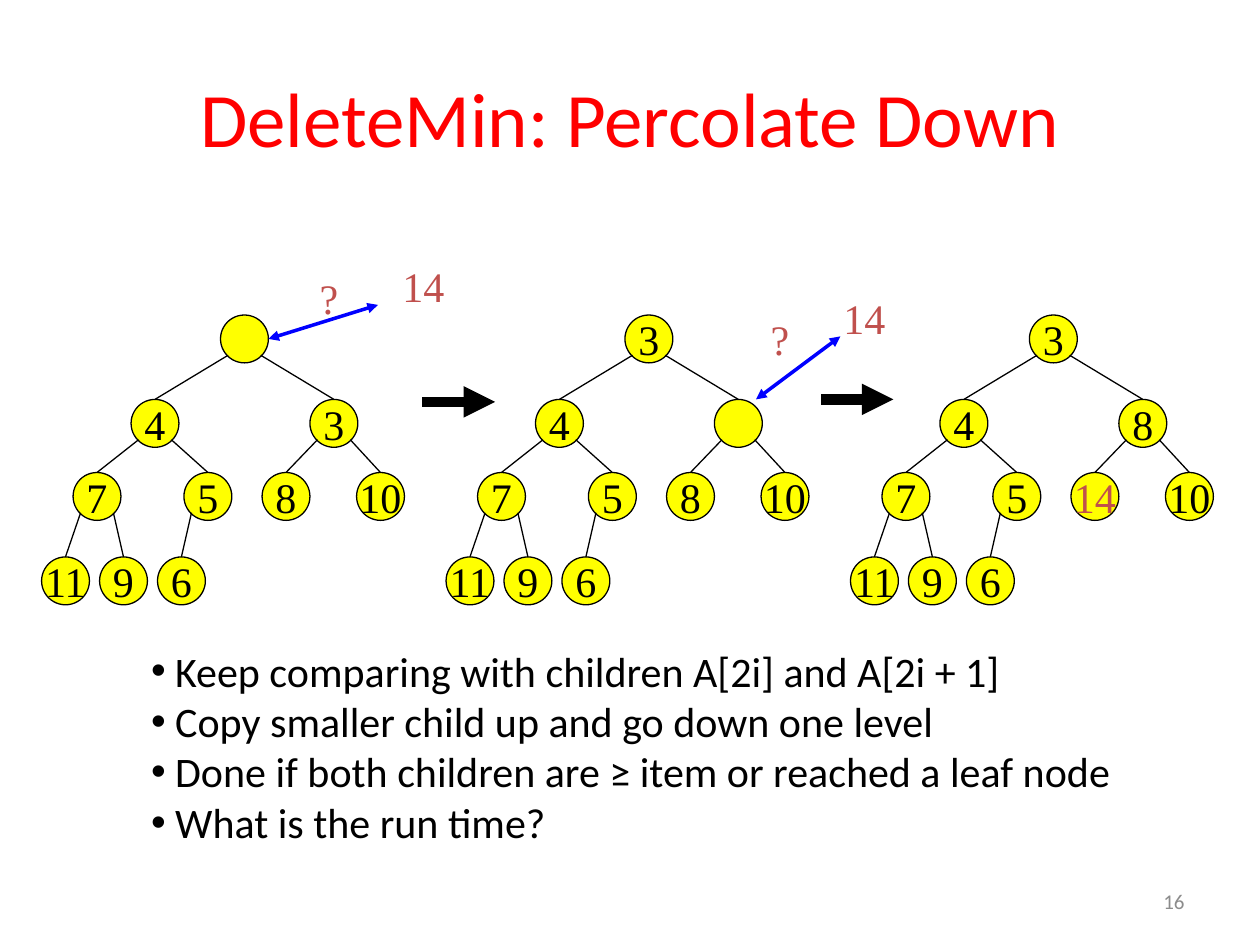
from dataclasses import dataclass

from lxml.etree import SubElement
from pptx import Presentation
from pptx.dml.color import RGBColor
from pptx.enum.shapes import MSO_CONNECTOR, MSO_SHAPE
from pptx.enum.text import MSO_ANCHOR, MSO_AUTO_SIZE, PP_ALIGN
from pptx.oxml.ns import qn
from pptx.slide import Slide
from pptx.text.text import TextFrame
from pptx.util import Inches, Pt


@dataclass(frozen=True)
class Theme:
    sans: str = "Calibri"
    serif: str = "Times New Roman"
    title: str = "FF0000"
    ink: str = "000000"
    node: str = "FFFF00"
    hole: str = "C0504D"
    swap: str = "0000FF"
    page: str = "8C8C8C"
    big: float = 44
    text: float = 24
    small: float = 12
    thin: float = 0.75
    mid: float = 2
    thick: float = 6


@dataclass(frozen=True)
class Tree:
    left: float
    keys: tuple[str, ...]
    moved: int = -1


@dataclass(frozen=True)
class Mark:
    text: str
    x: float
    y: float


@dataclass(frozen=True)
class Arrow:
    start: tuple[float, float]
    end: tuple[float, float]
    color: str
    width: float
    ends: tuple[str, ...]


THEME = Theme()
SIZE = 0.38
NEAR = 0.06
SPOTS = (
    (1.42, 2.5),
    (0.71, 3.17), (2.13, 3.17),
    (0.25, 3.75), (1.13, 3.75), (1.75, 3.75), (2.5, 3.75),
    (0, 4.42), (0.46, 4.42), (0.92, 4.42),
)
TREES = (
    Tree(0.33, ("", "4", "3", "7", "5", "8", "10", "11", "9", "6")),
    Tree(3.54, ("3", "4", "", "7", "5", "8", "10", "11", "9", "6")),
    Tree(6.75, ("3", "4", "8", "7", "5", "14", "10", "11", "9", "6"), moved=5),
)
MARKS = (
    Mark("14", 3.17, 2.08),
    Mark("?", 2.42, 2.17),
    Mark("14", 6.67, 2.33),
    Mark("?", 6, 2.5),
)
STEP = ("tailEnd",)
BOTH = ("headEnd", "tailEnd")
ARROWS = (
    Arrow((3.35, 3.19), (3.93, 3.19), THEME.ink, THEME.thick, STEP),
    Arrow((6.52, 3.17), (7.09, 3.17), THEME.ink, THEME.thick, STEP),
    Arrow((3, 2.42), (2.13, 2.69), THEME.swap, THEME.mid, BOTH),
    Arrow((6.67, 2.67), (6, 3.17), THEME.swap, THEME.mid, BOTH),
)
POINTS = (
    "Keep comparing with children A[2i] and A[2i + 1]",
    "Copy smaller child up and go down one level",
    "Done if both children are ≥ item or reached a leaf node",
    "What is the run time?",
)


def write(frame: TextFrame, text: str, *, size: float = THEME.text,
          font: str = THEME.sans, color: str = THEME.ink,
          align: PP_ALIGN = PP_ALIGN.LEFT,
          anchor: MSO_ANCHOR = MSO_ANCHOR.MIDDLE,
          wrap: bool = True, indent: float = 0) -> None:
    frame.text = text
    frame.auto_size = MSO_AUTO_SIZE.NONE
    frame.word_wrap = wrap
    frame.vertical_anchor = anchor
    for para in frame.paragraphs:
        para.alignment = align
        para.space_before = Pt(0)
        para.font.size = Pt(size)
        para.font.name = font
        para.font.color.rgb = RGBColor.from_string(color)
        if indent:
            props = para._p.get_or_add_pPr()
            props.set("marL", str(Inches(indent)))
            props.set("indent", str(-Inches(indent)))
            SubElement(props, qn("a:buFont")).set("typeface", "Arial")
            SubElement(props, qn("a:buChar")).set("char", "•")


def place(shape, x: float, y: float, wide: float, high: float) -> None:
    shape.left, shape.top = Inches(x), Inches(y)
    shape.width, shape.height = Inches(wide), Inches(high)


def add_ring(slide: Slide, x: float, y: float, text: str, color: str,
             fill: bool = True) -> None:
    ring = slide.shapes.add_shape(MSO_SHAPE.OVAL, Inches(x), Inches(y),
                                  Inches(SIZE), Inches(SIZE))
    ring.shadow.inherit = False
    if fill:
        ring.fill.solid()
        ring.fill.fore_color.rgb = RGBColor.from_string(THEME.node)
        ring.line.color.rgb = RGBColor.from_string(THEME.ink)
        ring.line.width = Pt(THEME.thin)
    else:
        ring.fill.background()
        ring.line.fill.background()
    if text:
        write(ring.text_frame, text, font=THEME.serif, color=color,
              align=PP_ALIGN.CENTER, wrap=False)


def add_line(slide: Slide, item: Arrow) -> None:
    ends = [Inches(n) for n in item.start + item.end]
    line = slide.shapes.add_connector(MSO_CONNECTOR.STRAIGHT, *ends)
    line.line.color.rgb = RGBColor.from_string(item.color)
    line.line.width = Pt(item.width)
    for end in item.ends:
        SubElement(line.line._ln, qn(f"a:{end}")).set("type", "triangle")
    SubElement(line._element.spPr, qn("a:effectLst"))


def add_tree(slide: Slide, tree: Tree) -> None:
    for i, (key, (x, y)) in enumerate(zip(tree.keys, SPOTS)):
        color = THEME.hole if i == tree.moved else THEME.ink
        add_ring(slide, tree.left + x, y, key, color)
        if i:
            px, py = SPOTS[(i - 1) // 2]
            side = NEAR if i % 2 else SIZE - NEAR
            start = (tree.left + px + side, py + SIZE - NEAR)
            end = (tree.left + x + SIZE / 2, y)
            add_line(slide, Arrow(start, end, THEME.ink, THEME.thin, ()))


def main() -> None:
    deck = Presentation()
    deck.slide_width, deck.slide_height = Inches(10), Inches(7.5)
    slide = deck.slides.add_slide(deck.slide_layouts[1])

    title, body = slide.placeholders
    place(title, 0.5, 0.3, 9, 1.25)
    write(title.text_frame, "DeleteMin: Percolate Down", size=THEME.big,
          color=THEME.title, align=PP_ALIGN.CENTER)
    place(body, 1.1, 5.07, 8.55, 1.72)
    write(body.text_frame, "\n".join(POINTS), anchor=MSO_ANCHOR.TOP, indent=0.19)

    page = slide.shapes.add_textbox(0, 0, 0, 0)
    place(page, 7.17, 6.95, 2.33, 0.4)
    write(page.text_frame, "16", size=THEME.small, color=THEME.page,
          align=PP_ALIGN.RIGHT)

    for tree in TREES:
        add_tree(slide, tree)
    for mark in MARKS:
        add_ring(slide, mark.x, mark.y, mark.text, THEME.hole, fill=False)
    for item in ARROWS:
        add_line(slide, item)
    deck.save("out.pptx")


if __name__ == "__main__":
    main()
